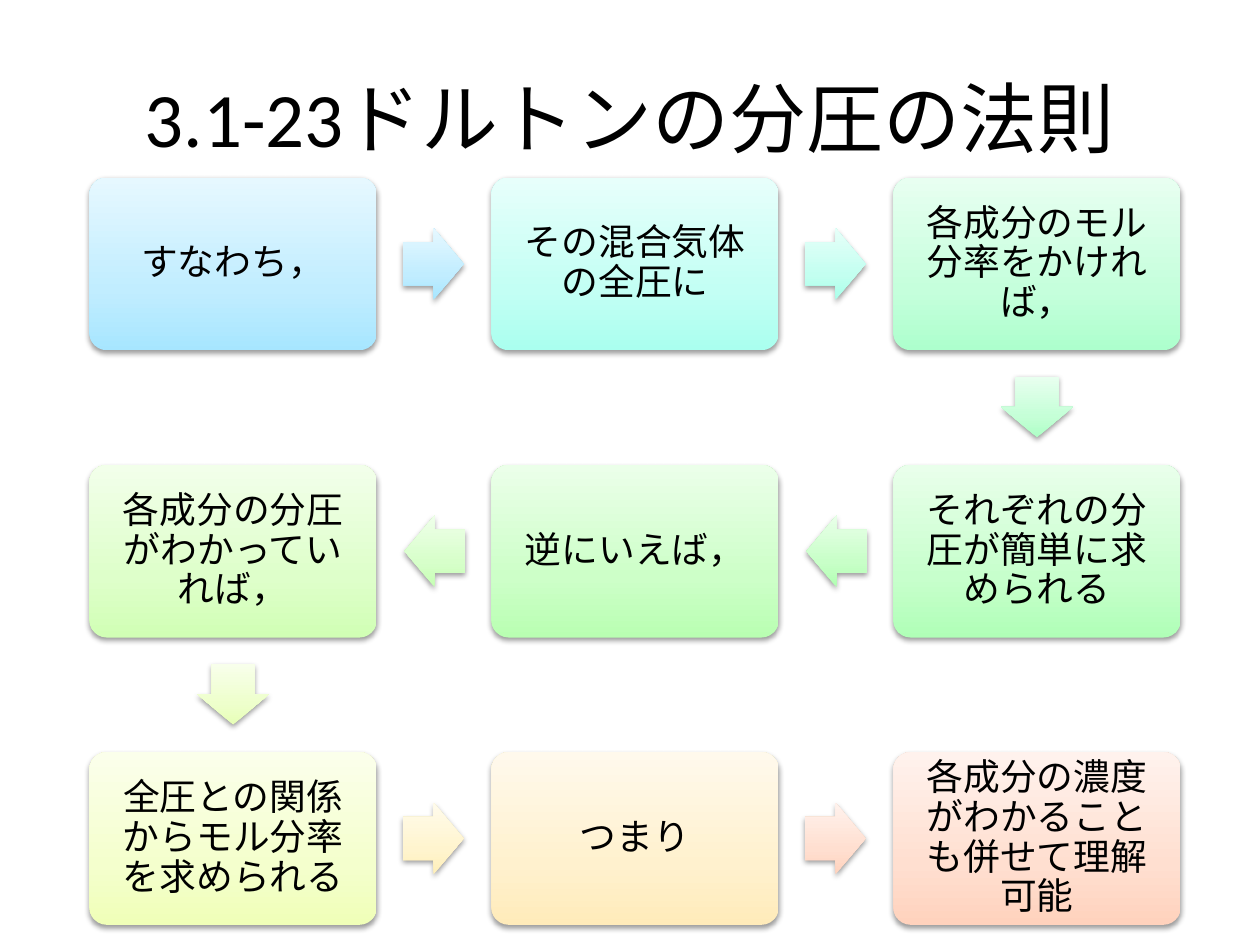
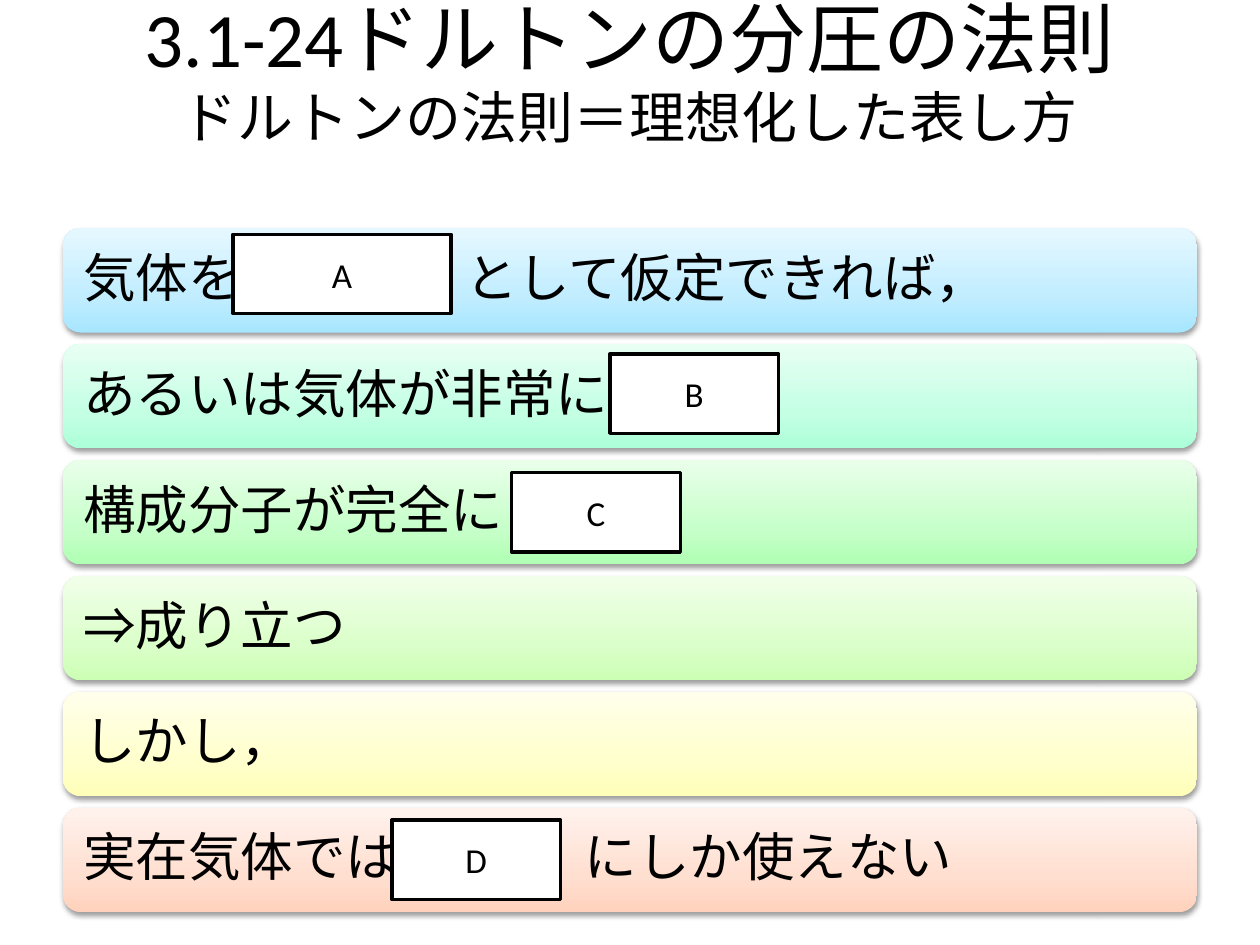
from dataclasses import dataclass

from pptx import Presentation
from pptx import util as u
from pptx.dml.color import RGBColor
from pptx.enum import shapes, text
from pptx.oxml import parse_xml
from pptx.oxml.ns import nsdecls, qn


@dataclass(frozen=True)
class Theme:
    font: str = "Calibri"
    ink: RGBColor = RGBColor(0, 0, 0)
    paper: RGBColor = RGBColor(255, 255, 255)
    title: int = 44
    subtitle: int = 32
    step: int = 21
    bar: int = 30
    blank: int = 20
    tints: tuple = ((0, 1), (35, 0.71), (100, 0.28))


T = Theme()
KIND = shapes.MSO_SHAPE
ALIGN = text.PP_ALIGN
Inches = u.Inches


def write(sp, *lines, size, align=ALIGN.CENTER, margin=None, spacing=None, tab=None):
    tf = sp.text_frame
    tf.word_wrap = True
    tf.auto_size = text.MSO_AUTO_SIZE.NONE
    tf.vertical_anchor = text.MSO_ANCHOR.MIDDLE
    if margin is not None:
        tf.margin_left = tf.margin_right = Inches(margin)
        tf.margin_top = tf.margin_bottom = Inches(margin)
    p = tf.paragraphs[0]
    p.alignment = align
    if spacing:
        p.line_spacing = spacing
    if tab:
        p._p.get_or_add_pPr().append(parse_xml(
            f'<a:tabLst {nsdecls("a")}><a:tab pos="{Inches(tab)}" algn="l"/></a:tabLst>'))
    for i, line in enumerate(lines):
        if i:
            p.add_line_break()
        r = p.add_run()
        r.text = line
        r.font.name = T.font
        r.font.size = u.Pt(size[i] if isinstance(size, tuple) else size)
        r.font.color.rgb = T.ink


def add_glossy(s, kind, x, y, w, h, color, adjustments):
    sp = s.shapes.add_shape(kind, Inches(x), Inches(y), Inches(w), Inches(h))
    for i, value in enumerate(adjustments):
        sp.adjustments[i] = value
    sp.line.fill.background()
    sp.fill.gradient()
    sp.shadow.inherit = False
    stops = ""
    for pos, strength in T.tints:
        rgb = [round(255 - (255 - c) * strength) for c in RGBColor.from_string(color)]
        stops += f'<a:gs pos="{pos * 1000}"><a:srgbClr val="{RGBColor(*rgb)}"/></a:gs>'
    spPr = sp._element.spPr
    spPr.replace(spPr.find(qn("a:gradFill")), parse_xml(
        f'<a:gradFill {nsdecls("a")} rotWithShape="0"><a:gsLst>{stops}</a:gsLst>'
        '<a:lin ang="16200000" scaled="0"/></a:gradFill>'))
    spPr.find(qn("a:effectLst")).append(parse_xml(
        f'<a:outerShdw {nsdecls("a")} blurRad="40000" dist="20000" dir="5400000" '
        'rotWithShape="0"><a:srgbClr val="000000"><a:alpha val="38000"/></a:srgbClr>'
        '</a:outerShdw>'))
    return sp


prs = Presentation()
prs.slide_width, prs.slide_height = Inches(10), Inches(7.5)
layout = prs.slide_layouts[5]

titles = [
    (("3.1-23ドルトンの分圧の法則",), 0.3, 1.25),
    (("3.1-24ドルトンの分圧の法則", "ドルトンの法則＝理想化した表し方"), 0, 1.11),
]
for lines, top, height in titles:
    s = prs.slides.add_slide(layout)
    sp = s.shapes.title
    sp.left, sp.top, sp.width, sp.height = (Inches(v) for v in (0.5, top, 9, height))
    write(sp, *lines, size=(T.title, T.subtitle))
flow, conditions = prs.slides

steps = [
    ("すなわち，", "A7E6FF", "A7E6FF"),
    ("その混合気体の全圧に", "AAFFEF", "AAFFEA"),
    ("各成分のモル分率をかければ，", "ADFFCD", "AEFFC6"),
    ("それぞれの分圧が簡単に求められる", "B0FFB7", "B1FFB2"),
    ("逆にいえば，", "B9FFB2", "C6FFB4"),
    ("各成分の分圧がわかっていれば，", "D1FFB5", "E7FFB7"),
    ("全圧との関係からモル分率を求められる", "F0FFB8", "FFF0BA"),
    ("つまり", "FFEBBA", "FFD2BD"),
    ("各成分の濃度がわかることも併せて理解可能", "FFD2BD", None),
]
box_w, box_h, arrow_w, arrow_h, reach = 2.28, 1.37, 0.48, 0.57, 0.45
for i, (label, box_color, arrow_color) in enumerate(steps):
    row, col = divmod(i, 3)
    leftward = row % 2 == 1
    x = 0.71 + 3.19 * (2 - col if leftward else col)
    y = 1.41 + 2.28 * row
    sp = add_glossy(flow, KIND.ROUNDED_RECTANGLE, x, y, box_w, box_h, box_color, [0.1])
    write(sp, label, size=T.step, margin=0.09, spacing=0.9)
    if arrow_color:
        cx, cy = x + box_w / 2, y + box_h / 2
        if col == 2:
            angle, cy = 90, cy + box_h / 2 + reach
        elif leftward:
            angle, cx = 180, cx - box_w / 2 - reach
        else:
            angle, cx = 0, cx + box_w / 2 + reach
        sp = add_glossy(flow, KIND.RIGHT_ARROW, cx - arrow_w / 2, cy - arrow_h / 2,
                        arrow_w, arrow_h, arrow_color, [0.6, 0.5])
        sp.rotation = angle

bars = [
    ("気体を\tとして仮定できれば，", "A7E6FF", 3.03),
    ("あるいは気体が非常に", "ACFFD9", None),
    ("構成分子が完全に", "B0FFB4", None),
    ("⇒成り立つ", "CCFFB4", None),
    ("しかし，", "FFFFB9", None),
    ("実在気体では\tにしか使えない", "FFD2BD", 3.98),
]
for i, (label, color, tab) in enumerate(bars):
    sp = add_glossy(conditions, KIND.ROUNDED_RECTANGLE, 0.5, 1.81 + 0.92 * i, 9, 0.83,
                    color, [0.17])
    write(sp, label, size=T.bar, align=ALIGN.LEFT, margin=0.12, spacing=0.9, tab=tab)

blanks = [("A", 1.85, 1.86, 1.73), ("B", 4.84, 2.81, 1.34),
          ("C", 4.06, 3.75, 1.34), ("D", 3.11, 6.51, 1.34)]
for label, x, y, w in blanks:
    sp = conditions.shapes.add_shape(KIND.RECTANGLE, Inches(x), Inches(y),
                                     Inches(w), Inches(0.63))
    sp.shadow.inherit = False
    sp.fill.solid()
    sp.fill.fore_color.rgb = T.paper
    sp.line.color.rgb = T.ink
    sp.line.width = u.Pt(2)
    write(sp, label, size=T.blank)

prs.save("out.pptx")
